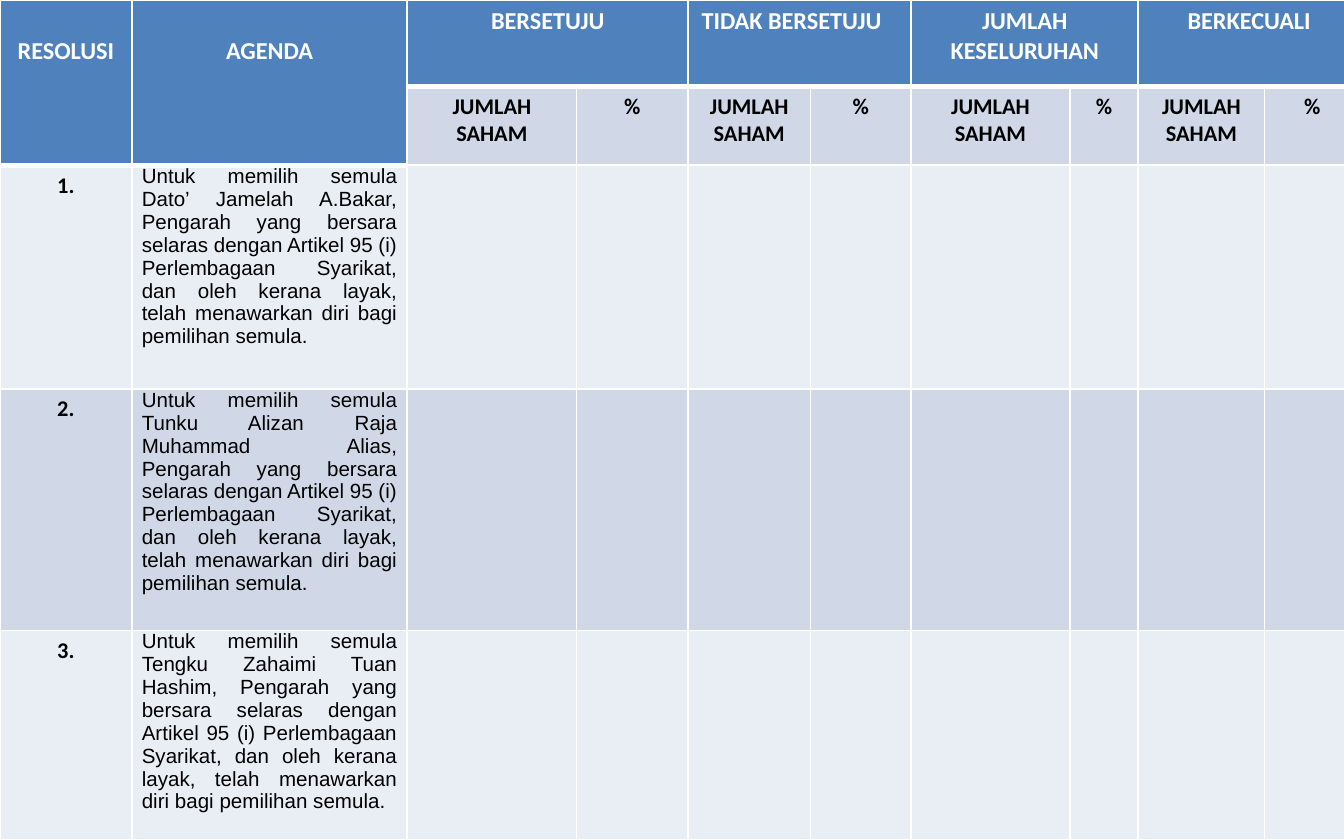
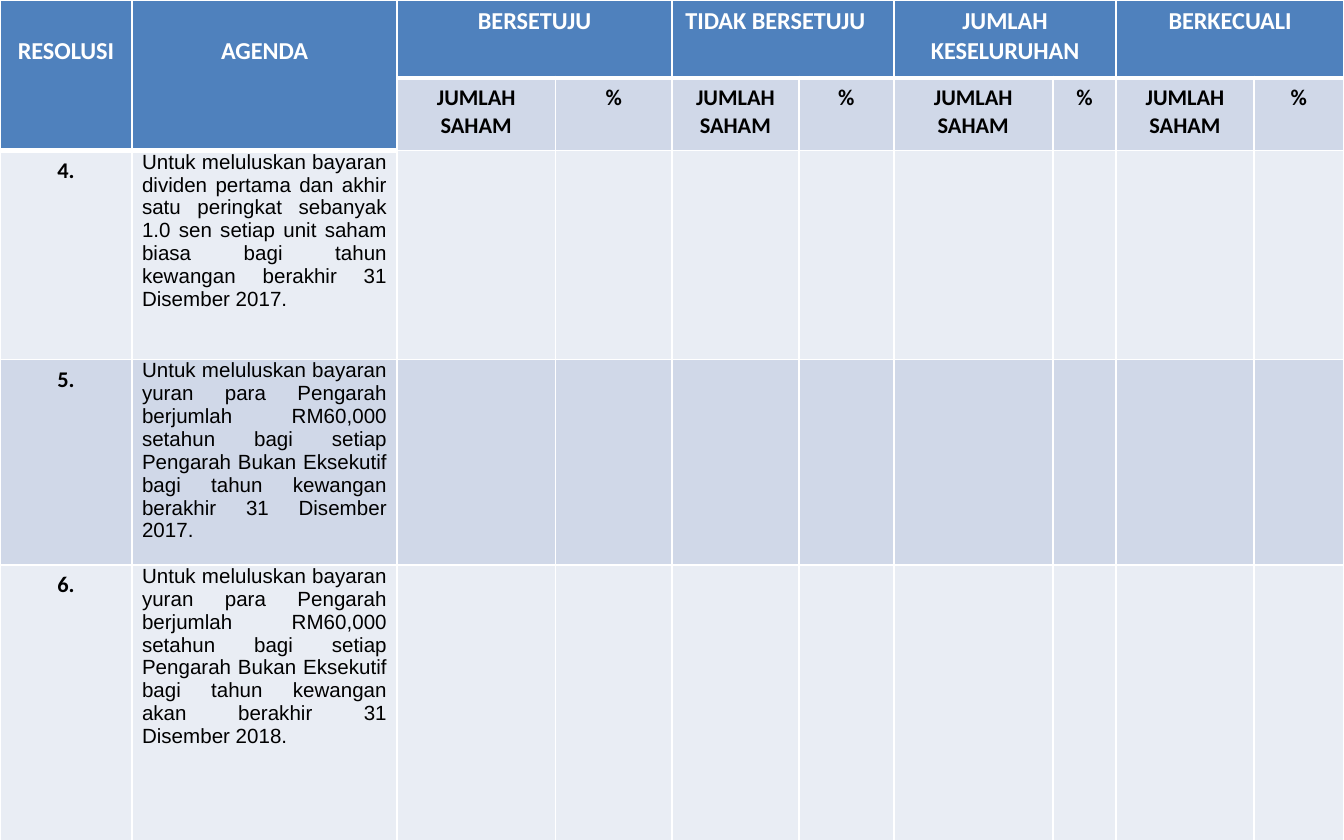
from lxml import etree
from pptx import Presentation
from pptx import util as u
from pptx.dml.color import RGBColor
from pptx.enum import text
from pptx.oxml.ns import qn

COLOURS = {
    "header": "4F81BD",
    "dark band": "D0D8E8",
    "light band": "E9EDF4",
    "white": "FFFFFF",
    "black": "000000",
}
SLIDE_SIZE = (720, 450)
ALIGN = text.PP_ALIGN
VOTE_GROUPS = ["BERSETUJU", "TIDAK BERSETUJU", "JUMLAH KESELURUHAN", "BERKECUALI"]
DIRECTOR_AGENDA = (
    "Untuk memilih semula {}, Pengarah yang bersara selaras dengan Artikel 95 (i) "
    "Perlembagaan Syarikat, dan oleh kerana layak, telah menawarkan diri bagi "
    "pemilihan semula."
)
FEE_AGENDA = (
    "Untuk meluluskan bayaran yuran para Pengarah berjumlah RM60,000 setahun bagi "
    "setiap Pengarah Bukan Eksekutif bagi tahun kewangan {}."
)
DIVIDEND_AGENDA = (
    "Untuk meluluskan bayaran dividen pertama dan akhir satu peringkat sebanyak "
    "1.0 sen setiap unit saham biasa bagi tahun kewangan berakhir 31 Disember 2017."
)
VOTING_SLIDES = [
    {
        "first number": 1,
        "columns": [70.6, 147.6, 90.7, 59.8, 65.5, 54, 85, 36.7, 67.7, 51.1],
        "rows": [46.1, 42.4, 119.9, 129.4, 112.2],
        "agenda": [
            DIRECTOR_AGENDA.format("Dato’ Jamelah A.Bakar"),
            DIRECTOR_AGENDA.format("Tunku Alizan Raja Muhammad Alias"),
            DIRECTOR_AGENDA.format("Tengku Zahaimi Tuan Hashim"),
        ],
    },
    {
        "first number": 4,
        "columns": [70.7, 142, 84.9, 62.4, 68, 50.9, 85.2, 34, 73.7, 48.2],
        "rows": [41.8, 38.2, 111.8, 110.1, 148.1],
        "agenda": [
            DIVIDEND_AGENDA,
            FEE_AGENDA.format("berakhir 31 Disember 2017"),
            FEE_AGENDA.format("akan berakhir 31 Disember 2018"),
        ],
    },
]


def style_cell(cell, fill, bottom_width=1):
    """Give the cell white borders and a solid fill; borders must come first in the XML."""
    properties = cell._tc.get_or_add_tcPr()
    for side, width in (("L", 1), ("R", 1), ("T", 1), ("B", bottom_width)):
        line = etree.SubElement(properties, qn(f"a:ln{side}"), w=str(u.Pt(width)))
        solid = etree.SubElement(line, qn("a:solidFill"))
        etree.SubElement(solid, qn("a:srgbClr"), val=COLOURS["white"])
    cell.fill.solid()
    cell.fill.fore_color.rgb = RGBColor.from_string(COLOURS[fill])


def write_cell(cell, words, size, colour="black", font="Calibri", bold=True,
               align=ALIGN.CENTER, margins=(7.2, 3.6)):
    """Write one run; margins are the side margin and the top margin."""
    side, top = margins
    cell.margin_left = cell.margin_right = u.Pt(side)
    cell.margin_top = u.Pt(top)
    cell.margin_bottom = u.Pt(min(top, 3.6))
    paragraph = cell.text_frame.paragraphs[0]
    paragraph.alignment = align
    run = paragraph.add_run()
    run.text = words
    run.font.size = u.Pt(size)
    run.font.name = font
    run.font.bold = bold
    run.font.color.rgb = RGBColor.from_string(COLOURS[colour])


def add_header(table):
    for column, label in enumerate(["RESOLUSI", "AGENDA"]):
        for row in (0, 1):
            style_cell(table.cell(row, column), "header", bottom_width=3)
        cell = table.cell(0, column)
        cell.merge(table.cell(1, column))
        write_cell(cell, label, 13, "white", margins=(7.2, 19.5))
    for group, label in enumerate(VOTE_GROUPS):
        first = 2 + 2 * group
        for offset, measure in enumerate(["JUMLAH SAHAM", "%"]):
            style_cell(table.cell(0, first + offset), "header", bottom_width=3)
            sub_header = table.cell(1, first + offset)
            style_cell(sub_header, "dark band")
            write_cell(sub_header, measure, 12)
        cell = table.cell(0, first)
        cell.merge(table.cell(0, first + 1))
        align = ALIGN.LEFT if label == "TIDAK BERSETUJU" else ALIGN.CENTER
        write_cell(cell, label, 13, "white", align=align)


def add_resolution(table, row, number, agenda):
    band = "dark band" if row % 2 else "light band"
    for column in range(len(table.columns)):
        style_cell(table.cell(row, column), band)
    write_cell(table.cell(row, 0), f"{number}.", 12)
    write_cell(table.cell(row, 1), agenda, 11, font="Arial", bold=False,
               align=ALIGN.JUSTIFY, margins=(5.4, 0))


def add_voting_slide(presentation, content):
    slide = presentation.slides.add_slide(presentation.slide_layouts[6])
    widths, heights = content["columns"], content["rows"]
    table = slide.shapes.add_table(
        len(heights), len(widths), 0, 0, u.Pt(sum(widths)), u.Pt(sum(heights))
    ).table
    for column, width in zip(table.columns, widths):
        column.width = u.Pt(width)
    for row, height in zip(table.rows, heights):
        row.height = u.Pt(height)
    add_header(table)
    for index, agenda in enumerate(content["agenda"]):
        add_resolution(table, index + 2, content["first number"] + index, agenda)


def main():
    presentation = Presentation()
    presentation.slide_width, presentation.slide_height = map(u.Pt, SLIDE_SIZE)
    for content in VOTING_SLIDES:
        add_voting_slide(presentation, content)
    presentation.save("out.pptx")


if __name__ == "__main__":
    main()
